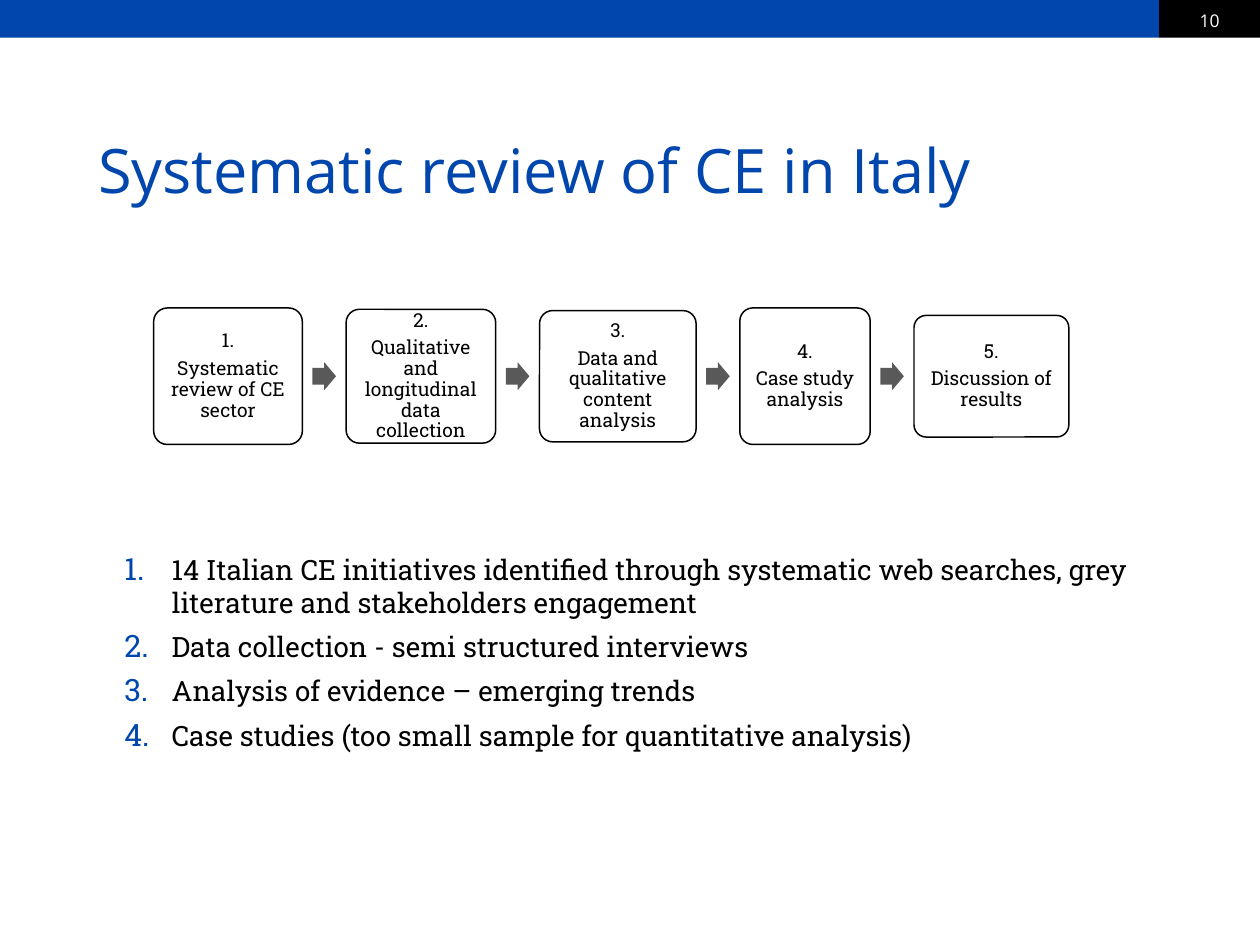
from lxml import etree
from pptx import Presentation
from pptx.dml.color import RGBColor
from pptx.enum import shapes, text
from pptx.oxml import ns
from pptx.util import Pt

BLUE = RGBColor(0x00, 0x46, 0xAD)
BLACK = RGBColor(0x00, 0x00, 0x00)
WHITE = RGBColor(0xFF, 0xFF, 0xFF)
GREY = RGBColor(0x59, 0x59, 0x59)
HEADING_FONT = "Open Sans"
BODY_FONT = "Roboto Slab"

STEPS = [
    ("1.", "Systematic review of CE sector", 85, 78),
    ("2.", "Qualitative and longitudinal data collection", 85.5, 76.5),
    ("3.", "Data and qualitative content analysis", 89.5, 75),
    ("4.", "Case study analysis", 74.5, 78),
    ("5.", "Discussion of results", 88.5, 69.5),
]
FINDINGS = [
    "14 Italian CE initiatives identified through systematic web searches, "
    "grey literature and stakeholders engagement",
    "Data collection - semi structured interviews",
    "Analysis of evidence – emerging trends",
    "Case studies (too small sample for quantitative analysis)",
]


def format_font(font, name, size, colour):
    font.name = name
    font.size = Pt(size)
    font.color.rgb = colour


def set_insets(frame, inset):
    frame.margin_left = frame.margin_right = Pt(inset)
    frame.margin_top = frame.margin_bottom = Pt(inset)


def add_block(slide, kind, left, top, width, height, fill=None):
    shape = slide.shapes.add_shape(kind, Pt(left), Pt(top), Pt(width), Pt(height))
    shape.shadow.inherit = False
    shape.line.fill.background()
    if fill is None:
        shape.fill.background()
    else:
        shape.fill.solid()
        shape.fill.fore_color.rgb = fill
    return shape


def add_header(slide, left, top, width, height):
    number_width = 57.6
    number_left = left + width - number_width
    rectangle = shapes.MSO_SHAPE.RECTANGLE
    add_block(slide, rectangle, left, top, width - number_width, height, BLUE)
    add_block(slide, rectangle, number_left, top, number_width, height, BLACK)
    box = slide.shapes.add_textbox(
        Pt(number_left), Pt(top + 2), Pt(number_width), Pt(height - 2))
    frame = box.text_frame
    frame.word_wrap = True
    frame.text = "10"
    frame.paragraphs[0].alignment = text.PP_ALIGN.CENTER
    format_font(frame.paragraphs[0].runs[0].font, HEADING_FONT, 10, WHITE)


def add_title(slide, left, top, width, height):
    title = slide.shapes.title
    title.left, title.top = Pt(left), Pt(top)
    title.width, title.height = Pt(width), Pt(height)
    frame = title.text_frame
    frame.text = "Systematic review of CE in Italy"
    frame.word_wrap = True
    frame.auto_size = text.MSO_AUTO_SIZE.SHAPE_TO_FIT_TEXT
    frame.vertical_anchor = text.MSO_ANCHOR.BOTTOM
    set_insets(frame, 0)
    frame.paragraphs[0].alignment = text.PP_ALIGN.LEFT
    format_font(frame.paragraphs[0].runs[0].font, HEADING_FONT, 35, BLUE)


def add_step(slide, left, top, width, height, number, label):
    step = add_block(
        slide, shapes.MSO_SHAPE.ROUNDED_RECTANGLE, left, top, width, height)
    step.adjustments[0] = 0.1
    step.line.color.rgb = BLACK
    step.line.width = Pt(0.85)
    frame = step.text_frame
    frame.word_wrap = True
    frame.vertical_anchor = text.MSO_ANCHOR.MIDDLE
    set_insets(frame, 3.6)
    frame.text = f"{number}\n{label}"
    for paragraph in frame.paragraphs:
        paragraph.alignment = text.PP_ALIGN.CENTER
        paragraph.line_spacing = 0.9
        paragraph.space_after = Pt(4)
        format_font(paragraph.runs[0].font, BODY_FONT, 11, BLACK)


def add_process(slide, left, top, height):
    gap, arrow_width, arrow_height = 25, 13.5, 16
    middle = top + height / 2
    for index, (number, label, step_width, step_height) in enumerate(STEPS):
        if index:
            arrow = add_block(
                slide, shapes.MSO_SHAPE.RIGHT_ARROW,
                left - (gap + arrow_width) / 2, middle - arrow_height / 2,
                arrow_width, arrow_height, GREY)
            arrow.adjustments[0] = 0.6
        add_step(slide, left, middle - step_height / 2,
                 step_width, step_height, number, label)
        left += step_width + gap


def add_numbering(paragraph, indent):
    properties = paragraph._p.get_or_add_pPr()
    properties.set("marL", str(Pt(indent)))
    properties.set("indent", str(-Pt(indent)))
    colour = etree.SubElement(properties, ns.qn("a:buClr"))
    etree.SubElement(colour, ns.qn("a:srgbClr"), val=str(BLUE))
    etree.SubElement(properties, ns.qn("a:buSzPct"), val="110000")
    etree.SubElement(properties, ns.qn("a:buFont"), typeface=BODY_FONT)
    etree.SubElement(properties, ns.qn("a:buAutoNum"), type="arabicPeriod")


def add_findings(slide, left, top, width, height):
    box = slide.shapes.add_textbox(Pt(left), Pt(top), Pt(width), Pt(height))
    frame = box.text_frame
    frame.word_wrap = True
    frame.text = "\n".join(FINDINGS)
    for paragraph in frame.paragraphs:
        add_numbering(paragraph, 27)
        paragraph.space_after = Pt(6)
        format_font(paragraph.runs[0].font, BODY_FONT, 16, BLACK)


def main():
    presentation = Presentation()
    presentation.slide_width, presentation.slide_height = Pt(720), Pt(540)
    slide = presentation.slides.add_slide(presentation.slide_layouts[5])
    add_header(slide, 0, 0, 720, 21.6)
    add_title(slide, 56, 75, 708, 42.5)
    add_process(slide, 87.8, 176, 78)
    add_findings(slide, 64, 312, 609, 292)
    presentation.save("out.pptx")


if __name__ == "__main__":
    main()
